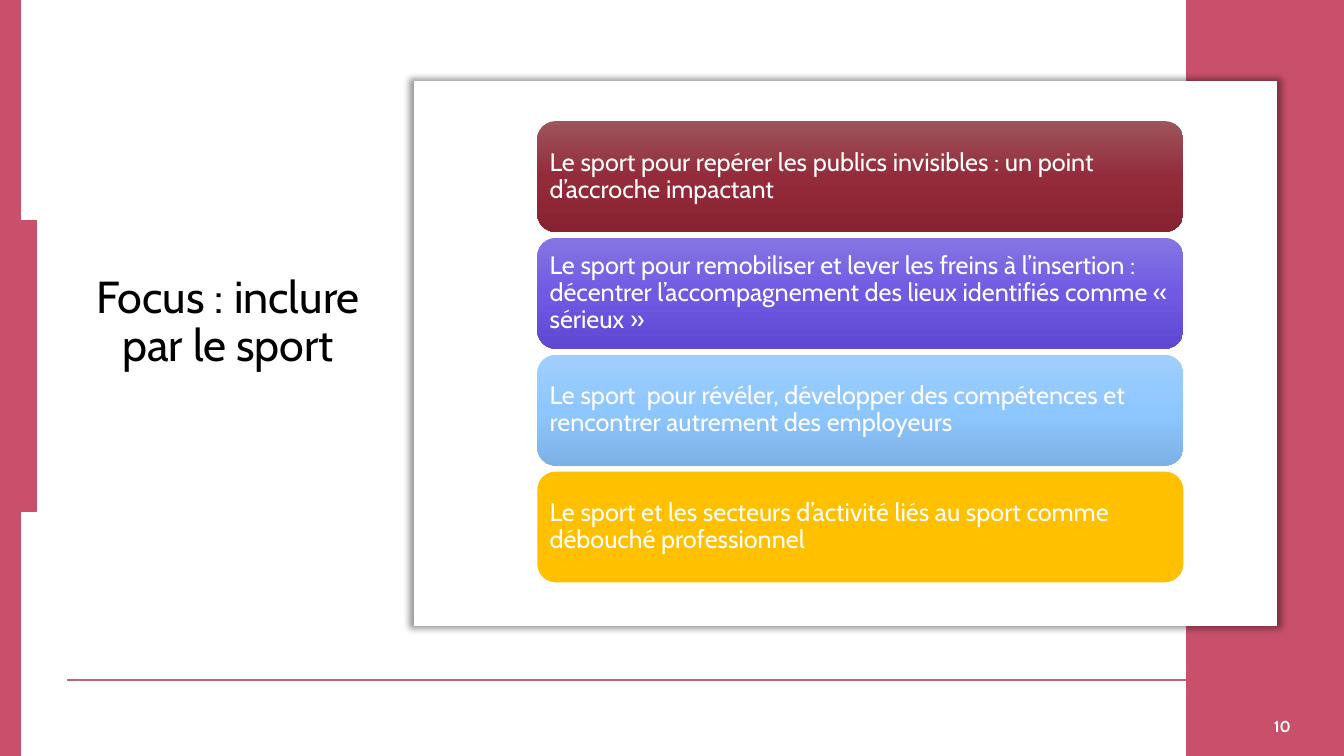
from copy import deepcopy

from lxml import etree
from pptx import Presentation
from pptx.dml.color import RGBColor
from pptx.enum import shapes, text
from pptx.oxml import ns
from pptx.util import Pt

FONT = "Cabin"
ROSE = RGBColor(0xC9, 0x50, 0x6B)
RULE = RGBColor(0xC9, 0x63, 0x72)
WHITE = RGBColor(0xFF, 0xFF, 0xFF)
BLACK = RGBColor(0x00, 0x00, 0x00)
WINE = [RGBColor(0x9D, 0x55, 0x5C), RGBColor(0x94, 0x2B, 0x3B), RGBColor(0x88, 0x22, 0x31)]
VIOLET = [RGBColor(0x85, 0x75, 0xE3), RGBColor(0x70, 0x5A, 0xE4), RGBColor(0x5E, 0x48, 0xD2)]
SKY = [RGBColor(0xA0, 0xCF, 0xFE), RGBColor(0x8E, 0xC7, 0xFF), RGBColor(0x7C, 0xB1, 0xE5)]
GOLD = [RGBColor(0xFF, 0xC0, 0x00)]

CARDS = [
    ("Le sport pour repérer les publics invisibles : un point d’accroche impactant", WINE),
    ("Le sport pour remobiliser et lever les freins à l’insertion : décentrer "
     "l’accompagnement des lieux identifiés comme « sérieux »", VIOLET),
    ("Le sport  pour révéler, développer des compétences et rencontrer autrement "
     "des employeurs", SKY),
    ("Le sport et les secteurs d’activité liés au sport comme débouché professionnel", GOLD),
]


def write(frame, words, size, color, align, bold=False):
    frame.word_wrap = True
    para = frame.paragraphs[0]
    para.alignment = align
    para.line_spacing = 0.9
    run = para.add_run()
    run.text = words
    run.font.name = FONT
    run.font.size = Pt(size)
    run.font.bold = bold
    run.font.color.rgb = color


def block(slide, kind, left, top, width, height):
    shape = slide.shapes.add_shape(kind, Pt(left), Pt(top), Pt(width), Pt(height))
    shape.shadow.inherit = False
    shape.line.fill.background()
    return shape


def paint(shape, colors):
    fill = shape.fill
    if len(colors) == 1:
        fill.solid()
        fill.fore_color.rgb = colors[0]
        return
    fill.gradient()
    fill.gradient_angle = 270
    first = next(shape.element.iter(ns.qn("a:gs")))
    first.addnext(deepcopy(first))
    for i, (stop, color) in enumerate(zip(fill.gradient_stops, colors)):
        stop.color.rgb = color
        stop.position = i / 2


def bar(slide, left, top, width, height, color=ROSE, edge=True):
    shape = block(slide, shapes.MSO_SHAPE.RECTANGLE, left, top, width, height)
    paint(shape, [color])
    if edge:
        shape.line.color.rgb = color
        shape.line.width = Pt(1)
    return shape


def glow(shape):
    effects = shape.element.spPr.find(ns.qn("a:effectLst"))
    shadow = etree.SubElement(effects, ns.qn("a:outerShdw"), blurRad=str(Pt(5)), dist="0",
                              dir="0", sx="101000", sy="101000", algn="ctr",
                              rotWithShape="0")
    color = etree.SubElement(shadow, ns.qn("a:srgbClr"), val="000000")
    etree.SubElement(color, ns.qn("a:alpha"), val="40000")


def frame(slide, width, height):
    rule = slide.shapes.add_connector(shapes.MSO_CONNECTOR.STRAIGHT, Pt(48), Pt(486),
                                      Pt(width - 48), Pt(486))
    rule.line.color.rgb = RULE
    rule.line.width = Pt(1.5)
    etree.SubElement(rule.element.spPr, ns.qn("a:effectLst"))
    bar(slide, 0, 0, 15, height, edge=False)
    bar(slide, width - 112.5, 0, 112.5, height)
    glow(bar(slide, 296, 58.5, 616, 388, WHITE))
    bar(slide, 0, 157.5, 26, 207.5)


def title(slide, left, top, width, height):
    head = slide.shapes.title
    head.left, head.top, head.width, head.height = Pt(left), Pt(top), Pt(width), Pt(height)
    area = head.text_frame
    area.auto_size = text.MSO_AUTO_SIZE.NONE
    area.vertical_anchor = text.MSO_ANCHOR.TOP
    area.margin_top = Pt(38.5)
    write(area, "Focus : inclure par le sport", 32, BLACK, text.PP_ALIGN.CENTER)


def number(slide, left, top, width, height):
    box = slide.shapes.add_textbox(Pt(left), Pt(top), Pt(width), Pt(height))
    box.text_frame.vertical_anchor = text.MSO_ANCHOR.BOTTOM
    write(box.text_frame, "10", 11.3, WHITE, text.PP_ALIGN.CENTER, bold=True)


def cards(slide, left, top, width, height, gap=4.3):
    tall = (height - gap * (len(CARDS) - 1)) / len(CARDS)
    for i, (words, colors) in enumerate(CARDS):
        card = block(slide, shapes.MSO_SHAPE.ROUNDED_RECTANGLE, left,
                     top + i * (tall + gap), width, tall)
        paint(card, colors)
        area = card.text_frame
        area.margin_left = area.margin_right = Pt(5)
        area.margin_top = area.margin_bottom = Pt(5)
        area.vertical_anchor = text.MSO_ANCHOR.MIDDLE
        write(area, words, 18, WHITE, text.PP_ALIGN.LEFT)


def main():
    deck = Presentation()
    deck.slide_width, deck.slide_height = Pt(960), Pt(540)
    slide = deck.slides.add_slide(deck.slide_layouts[5])
    frame(slide, 960, 540)
    title(slide, 46, 157.5, 234, 207.5)
    number(slide, 872.5, 500.5, 87, 29)
    cards(slide, 383.75, 86.5, 461.5, 329.5)
    deck.save("out.pptx")


if __name__ == "__main__":
    main()
